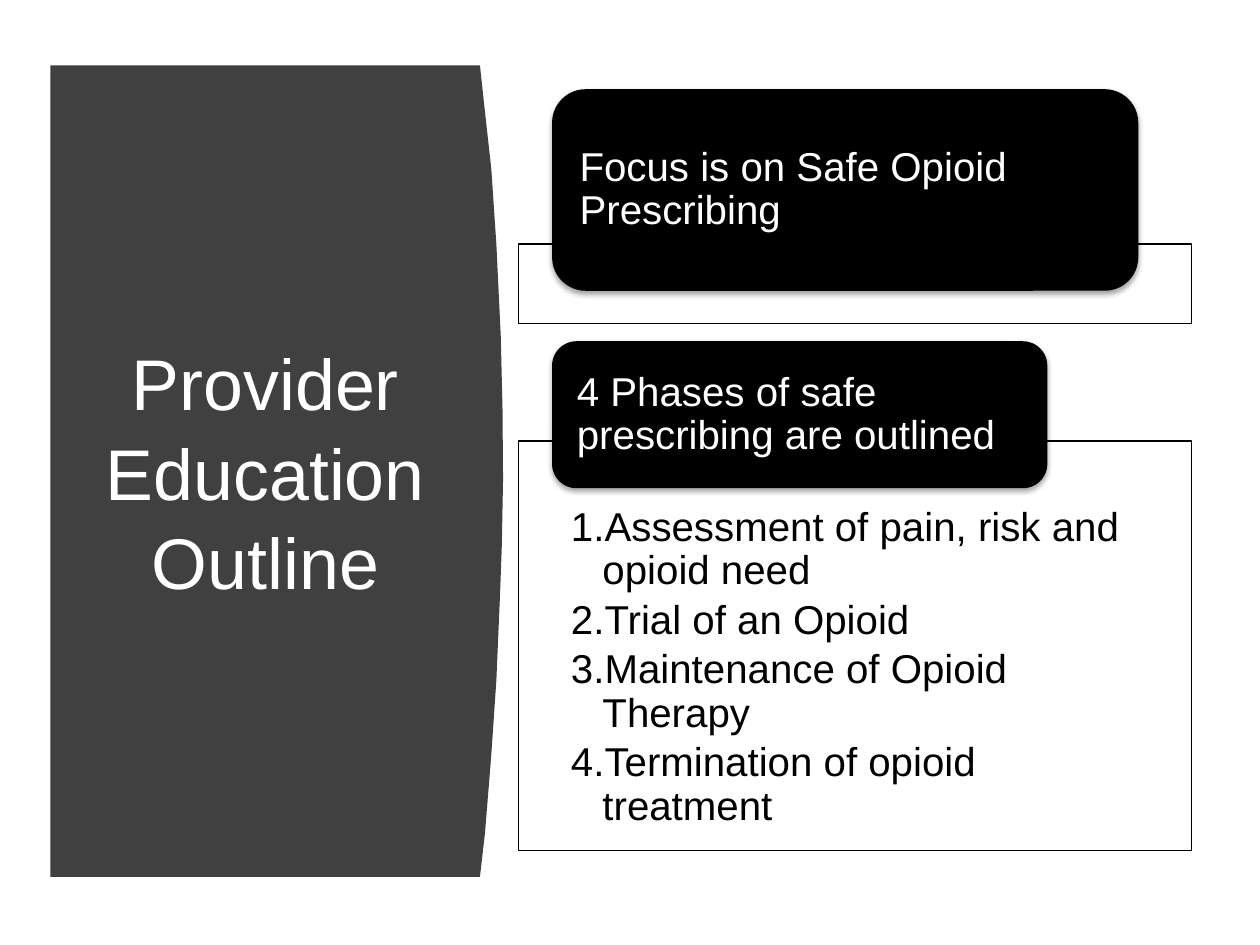
from lxml.etree import SubElement
from pptx import Presentation
from pptx.dml.color import RGBColor
from pptx.enum.shapes import MSO_SHAPE
from pptx.enum.text import MSO_ANCHOR, PP_ALIGN
from pptx.oxml.ns import qn
from pptx.util import Pt

COLOURS = {"panel": "404040", "dark": "000000", "light": "FFFFFF"}
CURVE = [(274.3, 37.4), (277.2, 64.1), (280.8, 96.5), (283.7, 139.7),
         (286.2, 192.2), (287.2, 234), (287.5, 273.6), (286.8, 311.8),
         (285.8, 339.1), (283.7, 388.8), (280.8, 431.3), (277.2, 475.9),
         (274.3, 501.1)]
SECTIONS = [
    {"frame": (139.5, 45.5), "heading": (51, 335, 115.2),
     "title": "Focus is on Safe Opioid Prescribing", "items": []},
    {"frame": (252, 234), "heading": (195, 283, 84),
     "title": "4 Phases of safe prescribing are outlined",
     "items": ["Assessment of pain, risk and opioid need", "Trial of an Opioid",
               "Maintenance of Opioid Therapy", "Termination of opioid treatment"]},
]


def add_text(para, text, size, colour, spacing, align=PP_ALIGN.LEFT):
    para.alignment = align
    para.line_spacing = spacing
    span = para.add_run()
    span.text = text
    span.font.name = "Arial"
    span.font.size = Pt(size)
    span.font.color.rgb = RGBColor.from_string(COLOURS[colour])


def set_frame(shape, anchor, side, top=0, bottom=0):
    frame = shape.text_frame
    frame.word_wrap = True
    frame.vertical_anchor = anchor
    frame.margin_left = frame.margin_right = Pt(side)
    frame.margin_top, frame.margin_bottom = Pt(top), Pt(bottom)
    return frame


deck = Presentation()
deck.slide_width, deck.slide_height = Pt(720), Pt(540)
page = deck.slides.add_slide(deck.slide_layouts[6])

builder = page.shapes.build_freeform(Pt(28.8), Pt(37.4))
builder.add_line_segments([(Pt(x), Pt(y)) for x, y in CURVE + [(28.8, 501.1)]])
panel = builder.convert_to_shape()
panel.shadow.inherit = False
panel.fill.solid()
panel.fill.fore_color.rgb = RGBColor.from_string(COLOURS["panel"])
panel.line.fill.background()

title = page.shapes.add_textbox(Pt(51), Pt(80), Pt(201.6), Pt(377.3))
frame = set_frame(title, MSO_ANCHOR.MIDDLE, 7.2, 3.6, 3.6)
add_text(frame.paragraphs[0], "Provider Education Outline", 41, "light", 1.04, PP_ALIGN.CENTER)

for section in SECTIONS:
    top, height = section["frame"]
    box = page.shapes.add_shape(MSO_SHAPE.RECTANGLE, Pt(296.5), Pt(top), Pt(384.5), Pt(height))
    box.shadow.inherit = False
    box.fill.solid()
    box.fill.fore_color.rgb = RGBColor.from_string(COLOURS["light"])
    box.line.color.rgb = RGBColor.from_string(COLOURS["dark"])
    box.line.width = Pt(0.75)
    frame = set_frame(box, MSO_ANCHOR.TOP, 29.8, 37.5, 13)
    for index, item in enumerate(section["items"]):
        para = frame.add_paragraph() if index else frame.paragraphs[0]
        properties = para._p.get_or_add_pPr()
        properties.set("marL", str(Pt(18)))
        properties.set("indent", str(Pt(-18)))
        SubElement(properties, qn("a:buFont"), typeface="Arial")
        SubElement(properties, qn("a:buAutoNum"), type="arabicPeriod")
        para.space_after = Pt(3.45)
        add_text(para, item, 23, "dark", 0.9)

    top, width, height = section["heading"]
    heading = page.shapes.add_shape(MSO_SHAPE.ROUNDED_RECTANGLE, Pt(315.5), Pt(top), Pt(width), Pt(height))
    heading.fill.solid()
    heading.fill.fore_color.rgb = RGBColor.from_string(COLOURS["dark"])
    heading.line.fill.background()
    heading.shadow.inherit = False
    effects = heading._element.spPr.find(qn("a:effectLst"))
    shadow = SubElement(effects, qn("a:outerShdw"), blurRad=str(Pt(3.1)),
                        dist=str(Pt(1.8)), dir="5400000", rotWithShape="0")
    shade = SubElement(shadow, qn("a:srgbClr"), val=COLOURS["dark"])
    SubElement(shade, qn("a:alpha"), val="35000")
    frame = set_frame(heading, MSO_ANCHOR.MIDDLE, 10.1)
    add_text(frame.paragraphs[0], section["title"], 23, "light", 0.9)

deck.save("out.pptx")
